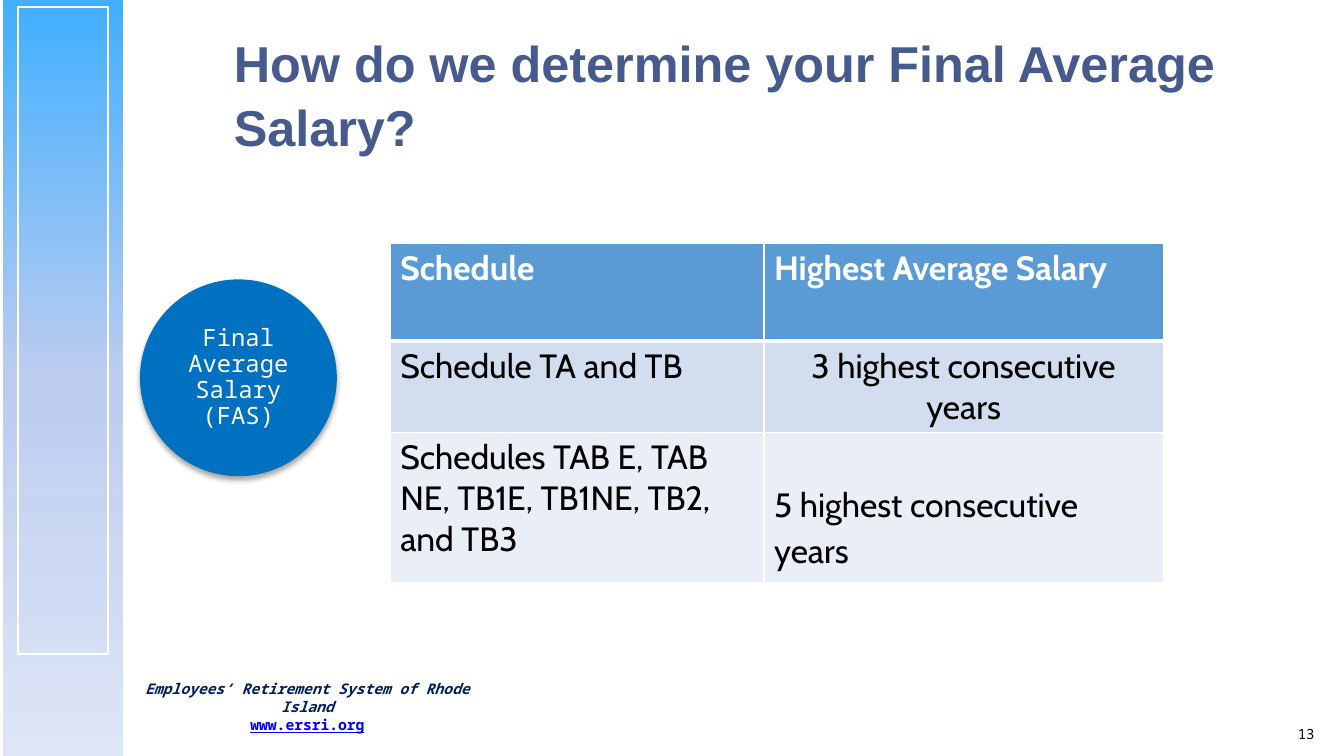
from copy import deepcopy
from dataclasses import dataclass, field

from pptx import Presentation
from pptx.dml.color import RGBColor
from pptx.enum.shapes import MSO_SHAPE
from pptx.enum.text import MSO_ANCHOR, MSO_AUTO_SIZE, PP_ALIGN
from pptx.oxml import parse_xml
from pptx.oxml.ns import nsdecls, qn
from pptx.util import Pt

RECT, OVAL = MSO_SHAPE.RECTANGLE, MSO_SHAPE.OVAL
LEFT, MID, RIGHT = PP_ALIGN.LEFT, PP_ALIGN.CENTER, PP_ALIGN.RIGHT
TOP, CENTRE, BASE = MSO_ANCHOR.TOP, MSO_ANCHOR.MIDDLE, MSO_ANCHOR.BOTTOM
FIXED = MSO_AUTO_SIZE.NONE

WHITE = RGBColor(0xFF, 0xFF, 0xFF)
BLACK = RGBColor(0, 0, 0)
NAVY = RGBColor(0x00, 0x20, 0x60)
LINK = RGBColor(0, 0, 0xFF)
SLATE = RGBColor(0x47, 0x5A, 0x8D)
BLUE = RGBColor(0x00, 0x70, 0xC0)
HEAD = RGBColor(0x5B, 0x9B, 0xD5)
BAND = RGBColor(0xD2, 0xDE, 0xEF)
PALE = RGBColor(0xEA, 0xEF, 0xF7)
FADE = (RGBColor(0x40, 0xAF, 0xFF), RGBColor(0xBC, 0xCC, 0xEF), RGBColor(0xDE, 0xE6, 0xF7))

MONO = "Noto Sans Mono"


@dataclass
class Line:
    text: str
    color: RGBColor
    font: dict
    form: dict = field(default_factory=dict)


@dataclass
class Box:
    left: float
    top: float
    width: float
    height: float

    def size(self) -> tuple:
        return Pt(self.left), Pt(self.top), Pt(self.width), Pt(self.height)


@dataclass
class Cell:
    text: str
    align: PP_ALIGN = LEFT
    frame: dict = field(default_factory=dict)
    space: float = 1.0


@dataclass
class Row:
    height: float
    fill: RGBColor
    color: RGBColor
    bold: bool
    cells: tuple


FOOT = (
    Line("Employees’ Retirement System of Rhode Island", NAVY,
         {"name": MONO, "size": Pt(10.5), "bold": True, "italic": True}, {"alignment": MID}),
    Line("www.ersri.org", LINK,
         {"name": MONO, "size": Pt(10.5), "bold": True, "underline": True}, {"alignment": MID}),
)
PAGE = (Line("13", BLACK, {"name": MONO, "size": Pt(10)}, {"alignment": RIGHT}),)
TITLE = (Line("How do we determine your Final Average Salary?", SLATE,
              {"name": "Arial", "size": Pt(36), "bold": True},
              {"alignment": LEFT, "line_spacing": 1.05}),)
DISC = (Line("Final Average Salary (FAS)", WHITE, {"name": MONO, "size": Pt(17)},
             {"alignment": MID, "line_spacing": 0.9}),)

COLS = (267.1, 285.1)
ROWS = (
    Row(69.8, HEAD, WHITE, True, (Cell("Schedule"), Cell("Highest Average Salary"))),
    Row(60.5, BAND, BLACK, False,
        (Cell("Schedule TA and TB"), Cell("3 highest consecutive years", MID))),
    Row(107.3, PALE, BLACK, False,
        (Cell("Schedules TAB E, TAB NE, TB1E, TB1NE, TB2, and TB3"),
         Cell("5 highest consecutive years", LEFT,
              {"vertical_anchor": BASE, "margin_bottom": Pt(8)}, 1.12))),
)


def apply(item, form: dict) -> None:
    for key, value in form.items():
        setattr(item, key, value)


def write(frame, lines: tuple, form: dict) -> None:
    apply(frame, {"word_wrap": True, "auto_size": FIXED, **form})
    for spot, line in enumerate(lines):
        para = frame.paragraphs[0] if spot == 0 else frame.add_paragraph()
        apply(para, line.form)
        run = para.add_run()
        run.text = line.text
        apply(run.font, line.font)
        run.font.color.rgb = line.color


def add_box(slide, box: Box, lines: tuple, anchor: MSO_ANCHOR) -> None:
    shape = slide.shapes.add_textbox(*box.size())
    write(shape.text_frame, lines, {"vertical_anchor": anchor})


def add_form(slide, kind: MSO_SHAPE, box: Box):
    shape = slide.shapes.add_shape(kind, *box.size())
    shape.shadow.inherit = False
    shape.line.fill.background()
    return shape


def add_side(slide) -> None:
    band = add_form(slide, RECT, Box(2.2, 0, 85.7, 540))
    band.fill.gradient()
    band.fill.gradient_angle = 270
    stops = band.element.spPr.find(qn("a:gradFill")).find(qn("a:gsLst"))
    stops.append(deepcopy(stops[-1]))
    for spot, (stop, color) in enumerate(zip(band.fill.gradient_stops, FADE)):
        stop.position = spot / 2
        stop.color.rgb = color
    frame = add_form(slide, RECT, Box(13, 5.2, 64.3, 462))
    frame.fill.background()
    frame.line.color.rgb = WHITE
    frame.line.width = Pt(1.75)


def add_disc(slide) -> None:
    disc = add_form(slide, OVAL, Box(100, 199.6, 140.6, 140.6))
    disc.fill.solid()
    disc.fill.fore_color.rgb = BLUE
    shade = parse_xml(
        f'<a:outerShdw {nsdecls("a")} blurRad="{Pt(4)}" dist="{Pt(3)}" dir="5400000" '
        f'rotWithShape="0"><a:srgbClr val="{BLACK}"><a:alpha val="35000"/></a:srgbClr>'
        '</a:outerShdw>')
    disc.element.spPr.find(qn("a:effectLst")).append(shade)
    sides = ("left", "top", "right", "bottom")
    write(disc.text_frame, DISC,
          {"vertical_anchor": CENTRE, **{f"margin_{side}": Pt(1.5) for side in sides}})


def edge(cell, row: int) -> None:
    widths = {"L": 1, "R": 1, "T": 3 if row == 1 else 1, "B": 3 if row == 0 else 1}
    for spot, (side, width) in enumerate(widths.items()):
        line = parse_xml(
            f'<a:ln{side} {nsdecls("a")} w="{Pt(width)}"><a:solidFill>'
            f'<a:srgbClr val="{WHITE}"/></a:solidFill></a:ln{side}>')
        cell._tc.get_or_add_tcPr().insert(spot, line)


def add_grid(slide) -> None:
    box = Box(278.7, 173.6, sum(COLS), sum(row.height for row in ROWS))
    grid = slide.shapes.add_table(len(ROWS), len(COLS), *box.size()).table
    for col, width in zip(grid.columns, COLS):
        col.width = Pt(width)
    for y, row in enumerate(ROWS):
        grid.rows[y].height = Pt(row.height)
        for x, item in enumerate(row.cells):
            cell = grid.cell(y, x)
            cell.fill.solid()
            cell.fill.fore_color.rgb = row.fill
            edge(cell, y)
            apply(cell, item.frame)
            line = Line(item.text, row.color,
                        {"name": "Cabin", "size": Pt(24), "bold": row.bold},
                        {"alignment": item.align, "line_spacing": item.space})
            write(cell.text_frame, (line,), {})


def main() -> None:
    deck = Presentation()
    deck.slide_width, deck.slide_height = Pt(960), Pt(540)
    slide = deck.slides.add_slide(deck.slide_layouts[5])
    title = slide.shapes.title
    apply(title, dict(zip(("left", "top", "width", "height"),
                          Box(159.8, 18, 786.2, 96.5).size())))
    write(title.text_frame, TITLE, {"vertical_anchor": CENTRE})
    add_box(slide, Box(95.8, 482.4, 247.7, 45.4), FOOT, TOP)
    add_side(slide)
    add_box(slide, Box(907.9, 504.7, 38.2, 28.8), PAGE, BASE)
    add_disc(slide)
    add_grid(slide)
    deck.save("out.pptx")


if __name__ == "__main__":
    main()
